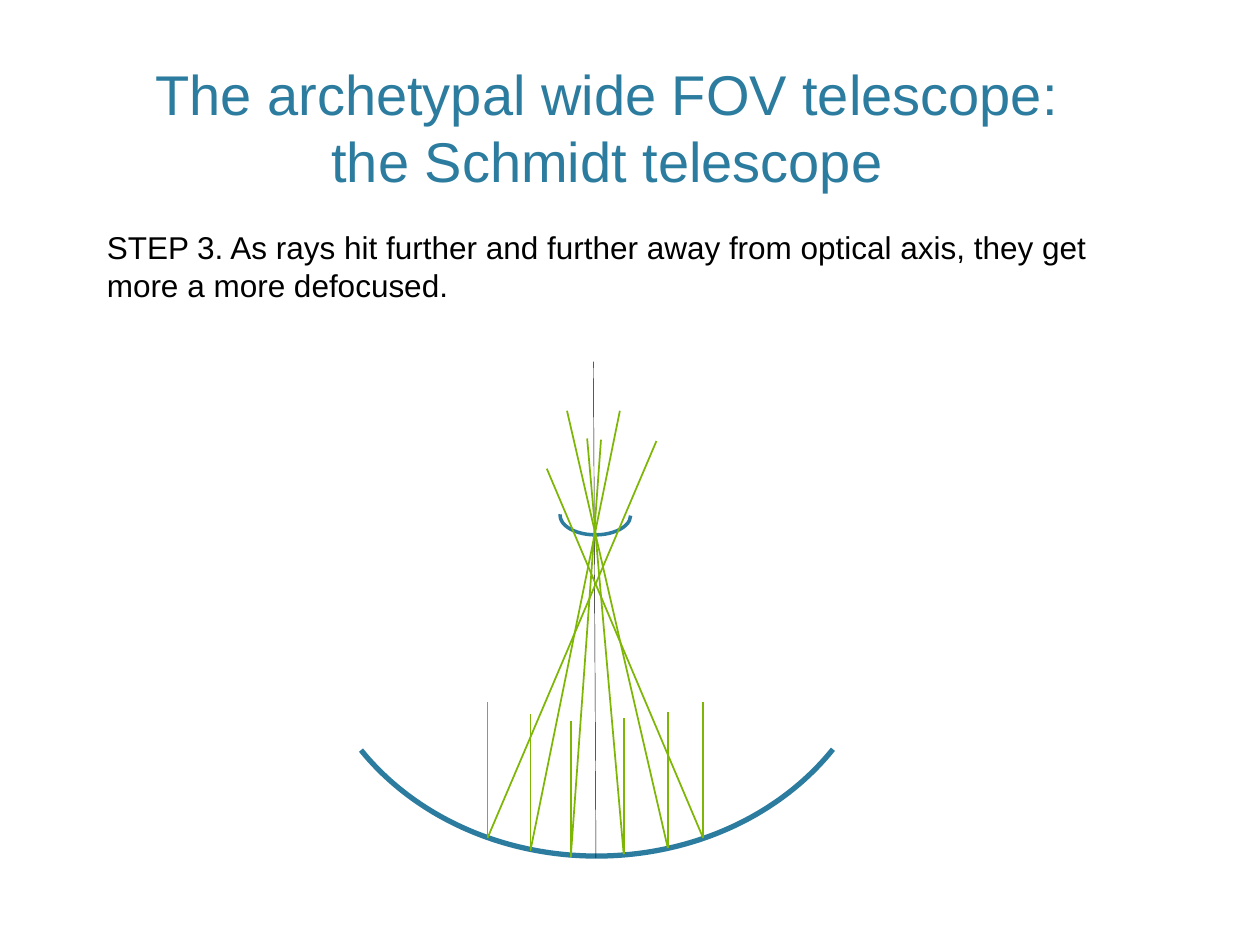
from dataclasses import dataclass

import pptx
import pptx.dml.color
import pptx.enum.shapes
import pptx.enum.text
import pptx.oxml
import pptx.oxml.ns
import pptx.util

COLUMNS, ROWS = 100, 75
CELL = pptx.util.Inches(0.1)
INCOMING_ROWS = 10.8


@dataclass(frozen=True)
class Theme:
    font: str = "Arial"
    accent: str = "2C7C9F"
    ray: str = "7EB606"
    ink: str = "000000"
    title_size: float = 32
    body_size: float = 18
    ray_width: float = 1
    axis_width: float = 0.25


@dataclass(frozen=True)
class Box:
    column: float
    row: float
    columns: float
    rows: float

    def lengths(self) -> tuple:
        return grid(self.column), grid(self.row), grid(self.columns), grid(self.rows)


@dataclass(frozen=True)
class Ray:
    column: float
    mirror_row: float
    exit_column: float
    exit_row: float


@dataclass(frozen=True)
class Mirror:
    box: Box
    start_degrees: float
    end_degrees: float
    width: float


THEME = Theme()

RAYS = (
    Ray(38.7, 66.5, 52.1, 35.0),
    Ray(42.1, 67.5, 49.2, 32.6),
    Ray(45.3, 68.0, 47.7, 34.9),
    Ray(49.5, 67.8, 46.6, 34.8),
    Ray(53.0, 67.3, 45.0, 32.6),
    Ray(55.8, 66.5, 43.4, 37.2),
)

MIRRORS = (
    Mirror(Box(45.7, 38.1, 3.1, 5.6), 270.53, 91.71, 2),
    Mirror(Box(27.7, 25.5, 39.3, 45.6), 300.78, 59.0, 3),
)


def grid(cells: float) -> pptx.util.Emu:
    return pptx.util.Emu(round(cells * CELL))


def rgb(color: str) -> pptx.dml.color.RGBColor:
    return pptx.dml.color.RGBColor.from_string(color)


def add_text(slide, box: Box, words: str, size: float, color: str,
             anchor=pptx.enum.text.MSO_ANCHOR.TOP,
             align=pptx.enum.text.PP_ALIGN.LEFT) -> None:
    frame = slide.shapes.add_textbox(*box.lengths()).text_frame
    frame.word_wrap = True
    frame.vertical_anchor = anchor
    paragraph = frame.paragraphs[0]
    paragraph.alignment = align
    run = paragraph.add_run()
    run.text = words
    run.font.name = THEME.font
    run.font.size = pptx.util.Pt(size)
    run.font.color.rgb = rgb(color)


def add_line(slide, start: tuple[float, float], end: tuple[float, float],
             color: str, width: float) -> None:
    line = slide.shapes.add_connector(
        pptx.enum.shapes.MSO_CONNECTOR.STRAIGHT,
        *map(grid, start), *map(grid, end))
    line.line.color.rgb = rgb(color)
    line.line.width = pptx.util.Pt(width)
    properties = line._element.spPr
    properties.append(pptx.oxml.parse_xml(
        f'<a:effectLst {pptx.oxml.ns.nsdecls("a")}/>'))


def add_mirror(slide, mirror: Mirror) -> None:
    arc = slide.shapes.add_shape(
        pptx.enum.shapes.MSO_SHAPE.ARC, *mirror.box.lengths())
    arc.adjustments[0] = mirror.start_degrees * 0.6
    arc.adjustments[1] = mirror.end_degrees * 0.6
    arc.rotation = 90
    arc.shadow.inherit = False
    arc.fill.background()
    arc.line.color.rgb = rgb(THEME.accent)
    arc.line.width = pptx.util.Pt(mirror.width)


def add_ray(slide, ray: Ray) -> None:
    reflection = (ray.column, ray.mirror_row)
    entry = (ray.column, ray.mirror_row - INCOMING_ROWS)
    for far_end in (entry, (ray.exit_column, ray.exit_row)):
        add_line(slide, far_end, reflection, THEME.ray, THEME.ray_width)


def main() -> None:
    deck = pptx.Presentation()
    deck.slide_width, deck.slide_height = grid(COLUMNS), grid(ROWS)
    slide = deck.slides.add_slide(deck.slide_layouts[6])

    add_text(slide, Box(8.9, 4.9, 78.6, 11),
             "The archetypal wide FOV telescope: the Schmidt telescope",
             THEME.title_size, THEME.accent,
             pptx.enum.text.MSO_ANCHOR.BOTTOM, pptx.enum.text.PP_ALIGN.CENTER)
    add_text(slide, Box(7.5, 17.6, 80, 7.1),
             "STEP 3. As rays hit further and further away from optical axis, "
             "they get more a more defocused.",
             THEME.body_size, THEME.ink)
    for mirror in MIRRORS:
        add_mirror(slide, mirror)
    add_line(slide, (47.1, 28.7), (47.3, 68.1), THEME.ink, THEME.axis_width)
    for ray in RAYS:
        add_ray(slide, ray)

    deck.save("out.pptx")


if __name__ == "__main__":
    main()
